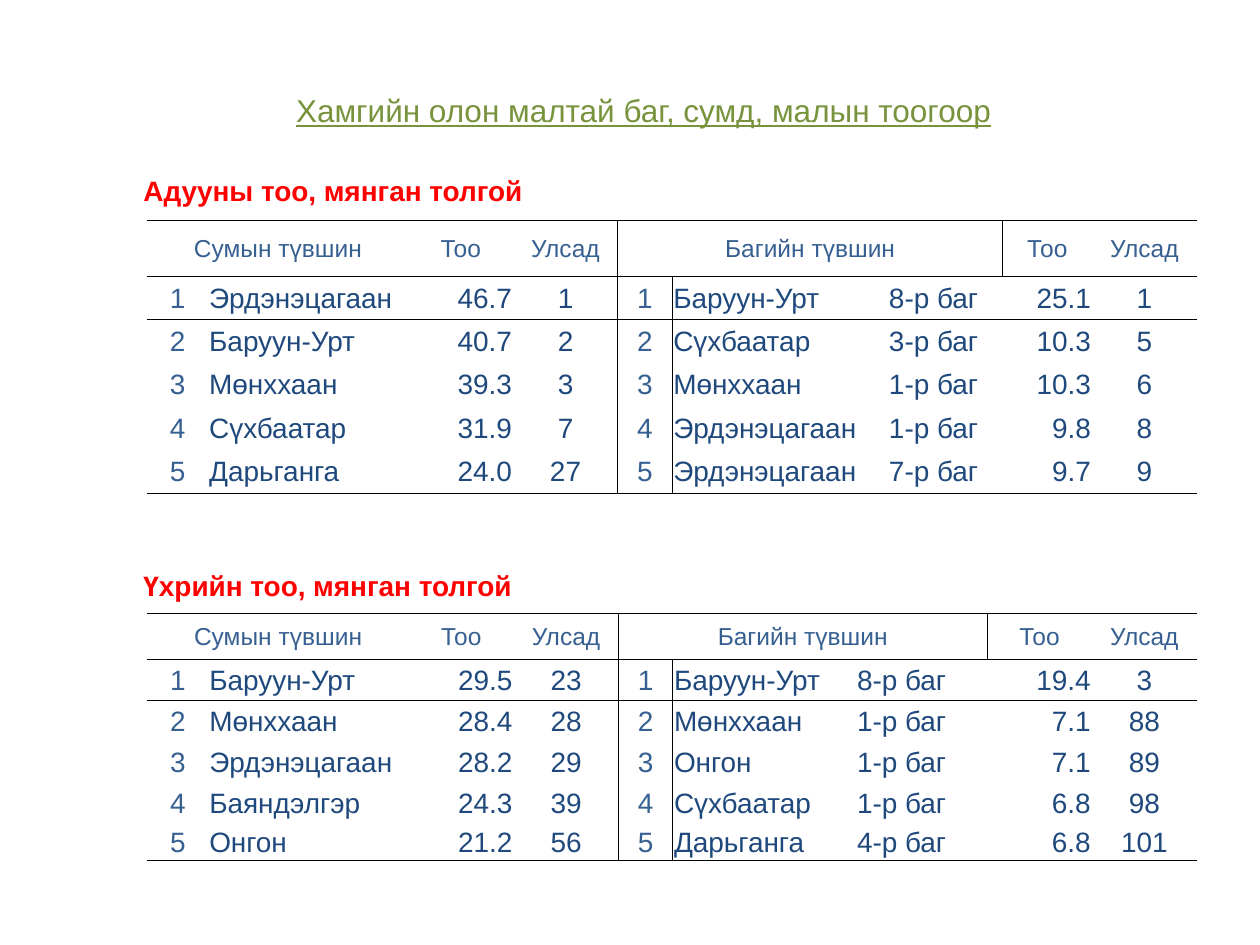
from dataclasses import dataclass

from lxml import etree
from pptx import Presentation
from pptx.dml.color import RGBColor
from pptx.enum.text import MSO_ANCHOR, MSO_AUTO_SIZE, PP_ALIGN
from pptx.oxml.ns import qn
from pptx.util import Emu, Inches, Pt

LEFT, CENTER, RIGHT = PP_ALIGN.LEFT, PP_ALIGN.CENTER, PP_ALIGN.RIGHT
TOP, MIDDLE = MSO_ANCHOR.TOP, MSO_ANCHOR.MIDDLE
GROW = MSO_AUTO_SIZE.SHAPE_TO_FIT_TEXT
SLIDE_W, SLIDE_H = Inches(10), Inches(7.5)
FONT = "Arial"
NO_GRID_STYLE = "{2D5ABB26-0587-4C30-8999-92F81FD0307C}"
COLORS = {
    "title": "77933C",
    "heading": "FF0000",
    "label": "376092",
    "value": "1F497D",
    "rule": "000000",
}
HEADER = ["Сумын түвшин", "", "Тоо", "Улсад", "Багийн түвшин", "", "", "Тоо", "Улсад"]
HEADER_SPANS = [(0, 1), (4, 6)]
ALIGNS = [CENTER, LEFT, RIGHT, CENTER, CENTER, LEFT, LEFT, RIGHT, CENTER]
RANK_COLS = (0, 4)
DIVIDER = 4


@dataclass
class Ranking:
    heading: str
    heading_y: float
    y: float
    h: float
    cols: list[float]
    rows: list[float]
    data: list[tuple[str, ...]]


RANKINGS = [
    Ranking(
        "Адууны тоо, мянган толгой", 17.73, 23.3, 28.9,
        [48, 159, 83, 83, 43, 171, 91, 71, 83],
        [44] + [34] * 5,
        [
            ("Эрдэнэцагаан", "46.7", "1", "Баруун-Урт", "8-р баг", "25.1", "1"),
            ("Баруун-Урт", "40.7", "2", "Сүхбаатар", "3-р баг", "10.3", "5"),
            ("Мөнххаан", "39.3", "3", "Мөнххаан", "1-р баг", "10.3", "6"),
            ("Сүхбаатар", "31.9", "7", "Эрдэнэцагаан", "1-р баг", "9.8", "8"),
            ("Дарьганга", "24.0", "27", "Эрдэнэцагаан", "7-р баг", "9.7", "9"),
        ],
    ),
    Ranking(
        "Үхрийн тоо, мянган толгой", 59.47, 64.9, 26.2,
        [48, 159, 83, 83, 43, 145, 104, 83, 83],
        [37] + [32.5] * 4 + [29.5],
        [
            ("Баруун-Урт", "29.5", "23", "Баруун-Урт", "8-р баг", "19.4", "3"),
            ("Мөнххаан", "28.4", "28", "Мөнххаан", "1-р баг", "7.1", "88"),
            ("Эрдэнэцагаан", "28.2", "29", "Онгон", "1-р баг", "7.1", "89"),
            ("Баяндэлгэр", "24.3", "39", "Сүхбаатар", "1-р баг", "6.8", "98"),
            ("Онгон", "21.2", "56", "Дарьганга", "4-р баг", "6.8", "101"),
        ],
    ),
]


def across(percent: float) -> Emu:
    return Emu(round(SLIDE_W * percent / 100))


def down(percent: float) -> Emu:
    return Emu(round(SLIDE_H * percent / 100))


def write(tf, text: str, size: float, color: str, align=LEFT, bold=False, underline=False) -> None:
    tf.text = text
    p = tf.paragraphs[0]
    p.alignment = align
    for r in p.runs:
        r.font.name = FONT
        r.font.size = Pt(size)
        r.font.bold = bold
        r.font.underline = underline
        r.font.color.rgb = RGBColor.from_string(COLORS[color])


def fit(tf) -> None:
    tf.word_wrap = True
    tf.vertical_anchor = TOP
    tf.auto_size = GROW


def add_title(s, text: str) -> None:
    sp = s.shapes.title
    sp.left, sp.top, sp.width, sp.height = across(22.5), down(8.93), across(58.3), down(5.39)
    write(sp.text_frame, text, 18, "title", underline=True)
    fit(sp.text_frame)


def add_heading(s, ranking: Ranking) -> None:
    sp = s.shapes.add_textbox(across(10.4), down(ranking.heading_y), across(58.3), down(4.93))
    write(sp.text_frame, ranking.heading, 16, "heading", bold=True)
    fit(sp.text_frame)


def add_borders(cell, sides: list[str]) -> None:
    tcPr = cell._tc.get_or_add_tcPr()
    for side in sides:
        ln = etree.SubElement(tcPr, qn(f"a:ln{side}"), w=str(Pt(0.5)))
        fill = etree.SubElement(ln, qn("a:solidFill"))
        etree.SubElement(fill, qn("a:srgbClr"), val=COLORS["rule"])


def format_cell(cell, row: int, col: int, last_row: int) -> None:
    rules = {
        "L": col == DIVIDER,
        "R": col == DIVIDER - 1,
        "T": row <= 1,
        "B": row in (0, last_row),
    }
    add_borders(cell, [side for side, shown in rules.items() if shown])
    cell.fill.background()
    cell.vertical_anchor = MIDDLE
    cell.margin_left = cell.margin_right = cell.margin_top = Inches(0.01)
    cell.margin_bottom = 0


def add_ranking(s, ranking: Ranking) -> None:
    lines = [HEADER] + [
        [str(rank), *values[:3], str(rank), *values[3:]]
        for rank, values in enumerate(ranking.data, 1)
    ]
    width, height = across(83.3), down(ranking.h)
    frame = s.shapes.add_table(
        len(lines), len(HEADER), across(11.7), down(ranking.y), width, height
    )
    table = frame.table
    table.first_row = table.horz_banding = False
    frame.element.find(".//" + qn("a:tableStyleId")).text = NO_GRID_STYLE
    for column, share in zip(table.columns, ranking.cols):
        column.width = Emu(round(width * share / sum(ranking.cols)))
    for line, share in zip(table.rows, ranking.rows):
        line.height = Emu(round(height * share / sum(ranking.rows)))
    for row, texts in enumerate(lines):
        for col, text in enumerate(texts):
            cell = table.cell(row, col)
            format_cell(cell, row, col, len(lines) - 1)
            if row == 0:
                write(cell.text_frame, text, 14, "label", CENTER)
            else:
                color = "label" if col in RANK_COLS else "value"
                write(cell.text_frame, text, 16, color, ALIGNS[col])
    for first, last in HEADER_SPANS:
        table.cell(0, first).merge(table.cell(0, last))


def main() -> None:
    prs = Presentation()
    prs.slide_width, prs.slide_height = SLIDE_W, SLIDE_H
    s = prs.slides.add_slide(prs.slide_layouts[5])
    add_title(s, "Хамгийн олон малтай баг, сумд, малын тоогоор")
    for ranking in RANKINGS:
        add_heading(s, ranking)
        add_ranking(s, ranking)
    prs.save("out.pptx")


if __name__ == "__main__":
    main()
